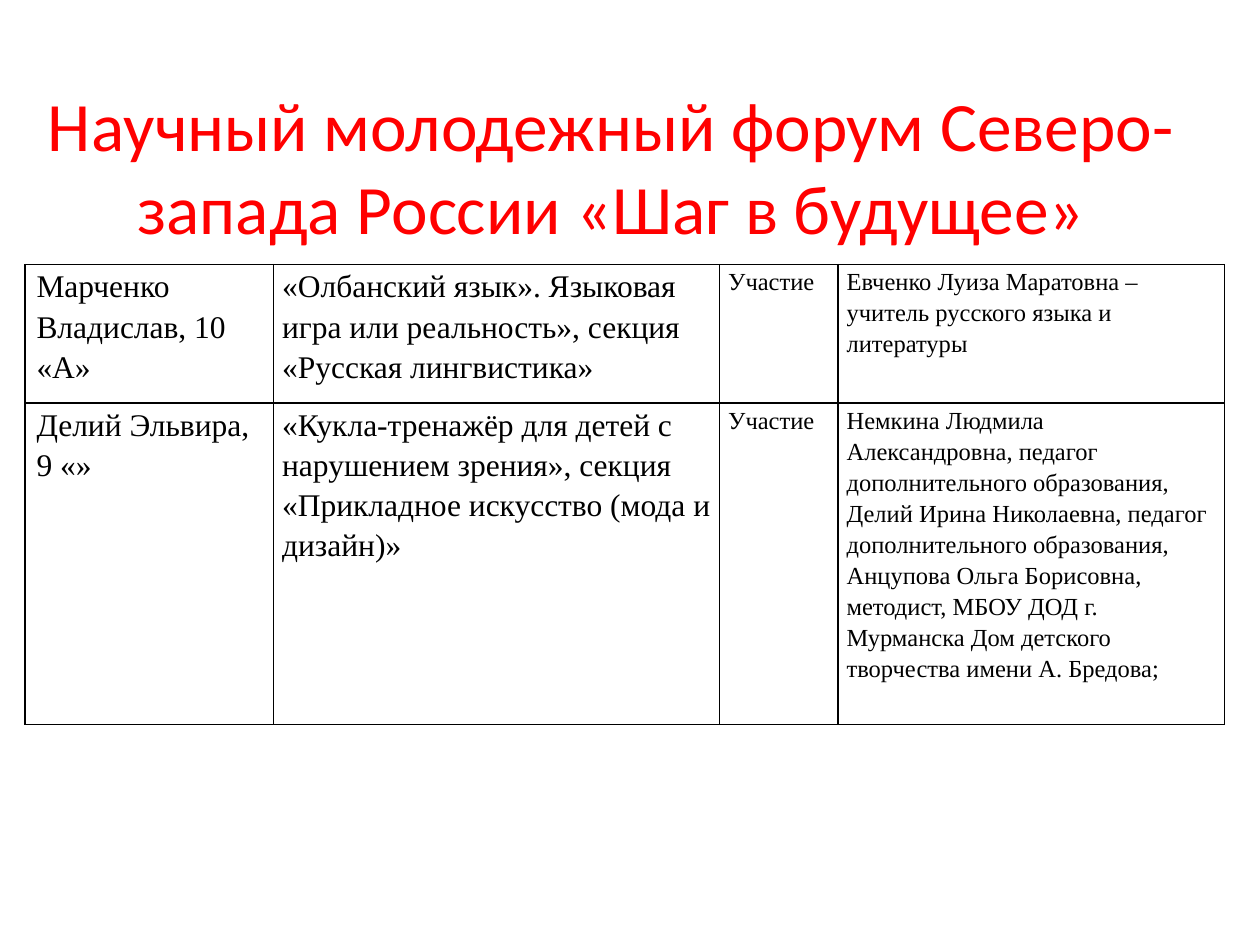
from lxml.etree import SubElement
from pptx import Presentation
from pptx.dml.color import RGBColor
from pptx.enum.text import MSO_ANCHOR, PP_ALIGN
from pptx.oxml.ns import qn
from pptx.util import Inches, Pt

COLORS = {"title": "FF0000", "text": "000000", "border": "000000"}
COLUMN_WIDTHS = [1.97, 3.54, 0.94, 3.07]
COLUMN_SIZES = [18, 18, 14, 14]
ROW_HEIGHTS = [1.1, 2.55]
ENTRIES = [
    [
        "Марченко Владислав, 10 «А»",
        "«Олбанский язык». Языковая игра или реальность», секция «Русская лингвистика»",
        "Участие",
        "Евченко Луиза Маратовна – учитель русского языка и литературы",
    ],
    [
        "Делий Эльвира, 9 «»",
        "«Кукла-тренажёр для детей с нарушением зрения», секция "
        "«Прикладное искусство (мода и дизайн)»",
        "Участие",
        "Немкина Людмила Александровна, педагог дополнительного образования, "
        "Делий Ирина Николаевна, педагог дополнительного образования, "
        "Анцупова Ольга Борисовна, методист, МБОУ ДОД г. Мурманска "
        "Дом детского творчества имени А. Бредова;",
    ],
]


def add_span(para, text, font, size, color):
    span = para.add_run()
    span.text = text
    span.font.name = font
    span.font.size = Pt(size)
    span.font.color.rgb = RGBColor.from_string(COLORS[color])


def outline_cell(cell):
    """Draw a thin line on all four sides and leave the cell unfilled."""
    properties = cell._tc.get_or_add_tcPr()
    for side in ("a:lnL", "a:lnR", "a:lnT", "a:lnB"):
        line = SubElement(properties, qn(side), w=str(Pt(1)))
        fill = SubElement(line, qn("a:solidFill"))
        SubElement(fill, qn("a:srgbClr"), val=COLORS["border"])
    cell.fill.background()


deck = Presentation()
deck.slide_width, deck.slide_height = Inches(10), Inches(7.5)
page = deck.slides.add_slide(deck.slide_layouts[6])

# Title
box = page.shapes.add_textbox(Inches(0.2), Inches(0.3), Inches(9.3), Inches(2.03))
box.text_frame.word_wrap = True
box.text_frame.vertical_anchor = MSO_ANCHOR.MIDDLE
para = box.text_frame.paragraphs[0]
para.alignment = PP_ALIGN.CENTER
add_span(para, "Научный молодежный форум Северо-запада России «Шаг в будущее»",
         "Calibri", 39.6, "title")

# Participants
table = page.shapes.add_table(
    len(ROW_HEIGHTS), len(COLUMN_WIDTHS), Inches(0.2), Inches(2.1),
    Inches(sum(COLUMN_WIDTHS)), Inches(sum(ROW_HEIGHTS))).table
table.first_row = table.horz_banding = False
for column, width in zip(table.columns, COLUMN_WIDTHS):
    column.width = Inches(width)

for row, height, entry in zip(table.rows, ROW_HEIGHTS, ENTRIES):
    row.height = Inches(height)
    for index, (cell, text, size) in enumerate(zip(row.cells, entry, COLUMN_SIZES)):
        outline_cell(cell)
        cell.margin_left = cell.margin_right = Inches(0.07)
        cell.margin_top = cell.margin_bottom = 0
        cell.vertical_anchor = MSO_ANCHOR.TOP
        para = cell.text_frame.paragraphs[0]
        para.line_spacing = 1.15
        para.space_after = Pt(6)
        if index == 0:
            para._p.get_or_add_pPr().set("marL", str(Inches(0.02)))
        add_span(para, text, "Times New Roman", size, "text")

deck.save("out.pptx")
